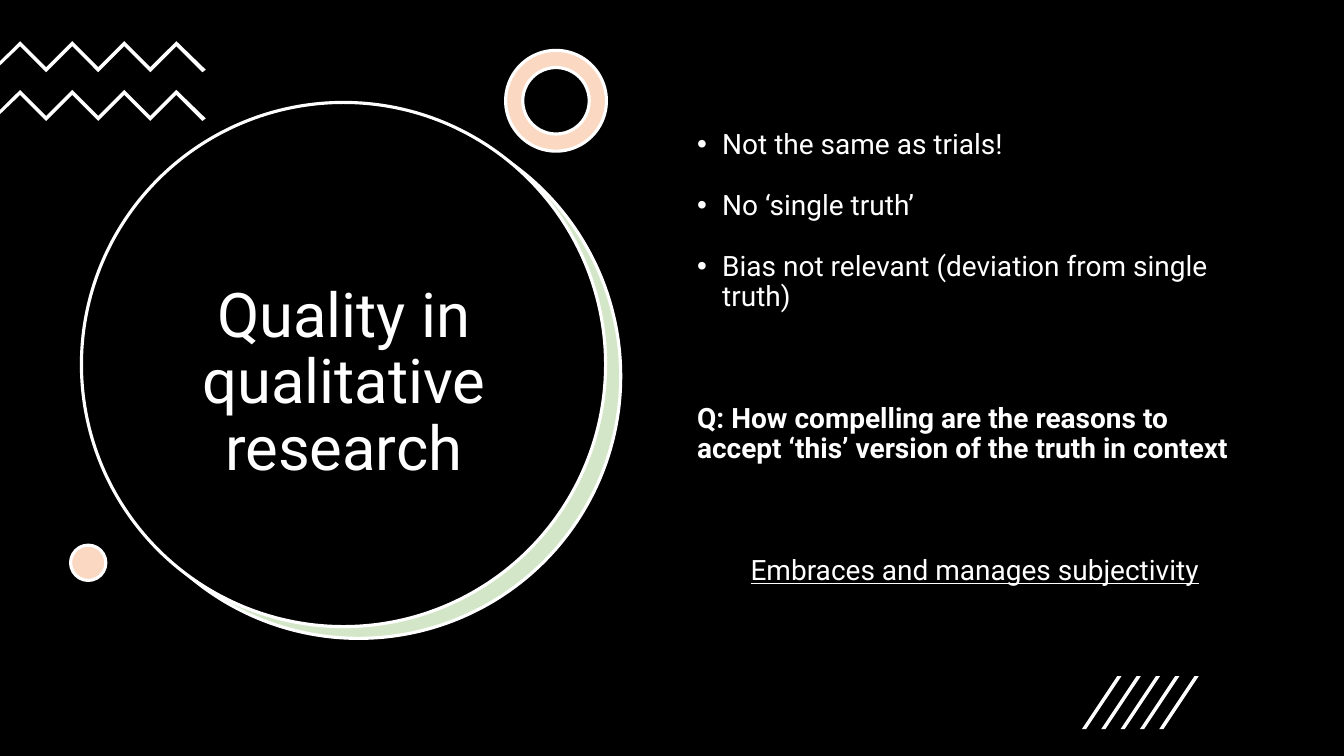
from lxml import etree
from pptx import Presentation
from pptx.dml.color import RGBColor
from pptx.enum.shapes import MSO_SHAPE
from pptx.enum.text import MSO_ANCHOR, MSO_AUTO_SIZE, PP_ALIGN
from pptx.oxml.ns import qn
from pptx.util import Inches, Pt

OVAL, DONUT = MSO_SHAPE.OVAL, MSO_SHAPE.DONUT
MIDDLE, NO_FIT = MSO_ANCHOR.MIDDLE, MSO_AUTO_SIZE.NONE
CENTER, LEFT = PP_ALIGN.CENTER, PP_ALIGN.LEFT

COLUMNS, ROWS = 16, 9
CELL = Inches(7.5) // ROWS
BLACK, WHITE, GREEN, PEACH = "000000", "FFFFFF", "D4E6C8", "FAD8C1"
FONT = "Roboto"

BULLETS = [
    "Not the same as trials!",
    "No ‘single truth’",
    "Bias not relevant (deviation from single truth)",
]
QUESTION = "Q: How compelling are the reasons to accept ‘this’ version of the truth in context"
CONCLUSION = "Embraces and manages subjectivity"


def grid(*cells):
    """Turn lengths in grid cells into slide units."""
    return [round(cell * CELL) for cell in cells]


def paint(fill, color):
    fill.solid()
    fill.fore_color.rgb = RGBColor.from_string(color)


def add_round(page, kind, left, top, size, color):
    shape = page.shapes.add_shape(kind, *grid(left, top, size, size))
    shape.shadow.inherit = False
    paint(shape.fill, color)
    paint(shape.line.fill, WHITE)
    shape.line.width = Pt(2.25)
    return shape


def add_polygon(page, points):
    start, *others = [grid(*point) for point in points]
    builder = page.shapes.build_freeform(*start)
    builder.add_line_segments(others)
    shape = builder.convert_to_shape()
    shape.shadow.inherit = False
    paint(shape.fill, WHITE)
    shape.line.fill.background()


def add_zigzag(page, top):
    step, thickness = 0.31, 0.06
    upper = [(0.24 + i * step, top + i % 2 * step) for i in range(7)]
    lower = [(x, y + thickness) for x, y in reversed(upper)]
    right_end = [(2.45, top + 0.34), (2.41, top + 0.37)]
    left_end = [(0, top + 0.29), (0, top + 0.24)]
    add_polygon(page, upper + right_end + lower + left_end)


def add_slash(page, left):
    top, bottom, slant, thickness = 8.05, 8.68, 0.42, 0.05
    add_polygon(page, [
        (left + thickness, bottom), (left, bottom),
        (left + slant, top), (left + slant + thickness, top),
    ])


def style(para, size, align):
    para.alignment = align
    para.line_spacing = 0.9
    para.font.size = Pt(size)
    para.font.name = FONT
    para.font.color.rgb = RGBColor.from_string(WHITE)


def add_title(page, text):
    title = page.shapes.title
    title.left, title.top, title.width, title.height = grid(1.45, 2.46, 5.29, 4.22)
    frame = title.text_frame
    frame.text = text
    frame.word_wrap = True
    frame.auto_size = NO_FIT
    frame.vertical_anchor = MIDDLE
    style(frame.paragraphs[0], 44, CENTER)


def add_bullet(para):
    properties = para._p.get_or_add_pPr()
    properties.set("marL", str(Inches(0.25)))
    properties.set("indent", str(-Inches(0.25)))
    etree.SubElement(properties, qn("a:buFont"), typeface="Arial")
    etree.SubElement(properties, qn("a:buChar"), char="•")


def add_body(page):
    frame = page.shapes.add_textbox(*grid(8.18, 1.49, 6.85, 5.71)).text_frame
    frame.word_wrap = True
    for index, text in enumerate([*BULLETS, QUESTION, CONCLUSION]):
        para = frame.paragraphs[0] if index == 0 else frame.add_paragraph()
        para.text = text
        bulleted = text in BULLETS
        if bulleted:
            add_bullet(para)
        style(para, 20, CENTER if text == CONCLUSION else LEFT)
        if index:
            para.space_before = Pt(10 if bulleted else 53.5)
        para.space_after = Pt(12)
        para.font.bold = text == QUESTION
        para.font.underline = text == CONCLUSION


def main():
    deck = Presentation()
    deck.slide_width, deck.slide_height = grid(COLUMNS, ROWS)
    page = deck.slides.add_slide(deck.slide_layouts.get_by_name("Title Only"))
    paint(page.background.fill, BLACK)

    add_round(page, OVAL, 1.15, 1.36, 6.24, GREEN)
    add_round(page, OVAL, 0.97, 1.22, 6.24, BLACK)
    for top in (0.49, 1.07):
        add_zigzag(page, top)
    ring = add_round(page, DONUT, 6.02, 0.6, 1.2, PEACH)
    ring.adjustments[0] = 0.17
    add_round(page, OVAL, 0.84, 6.49, 0.42, PEACH)
    for index in range(5):
        add_slash(page, 12.88 + index * 0.23)

    add_title(page, "Quality in qualitative research")
    # The title sits in front of the circles.
    tree = page.shapes._spTree
    tree.append(page.shapes.title._element)
    add_body(page)
    deck.save("out.pptx")


if __name__ == "__main__":
    main()
